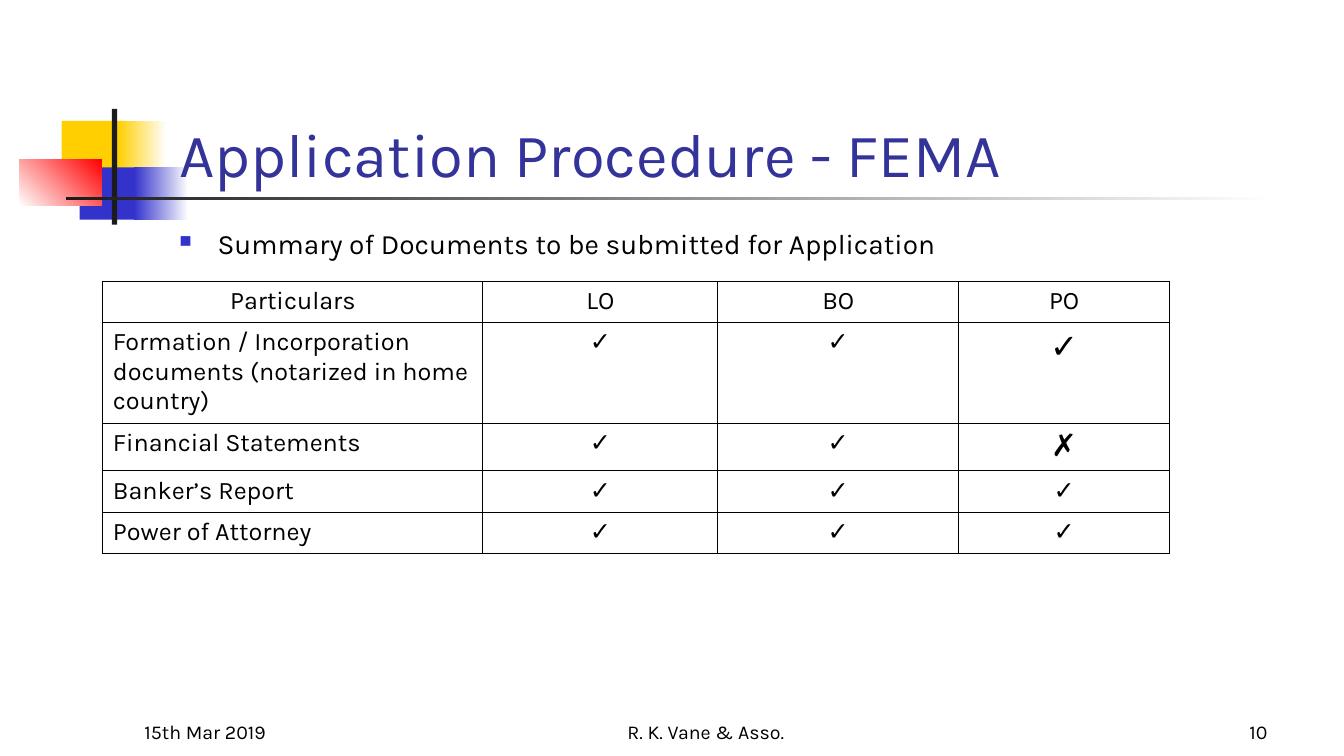
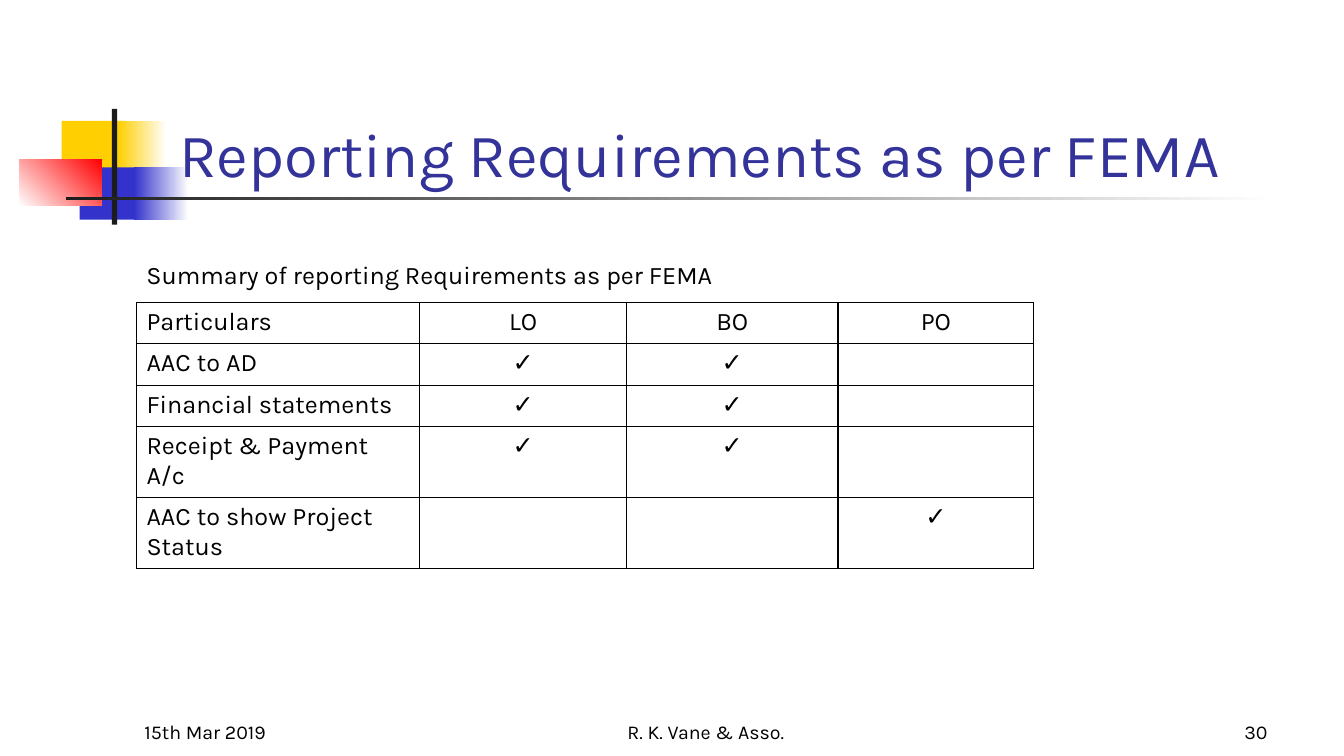
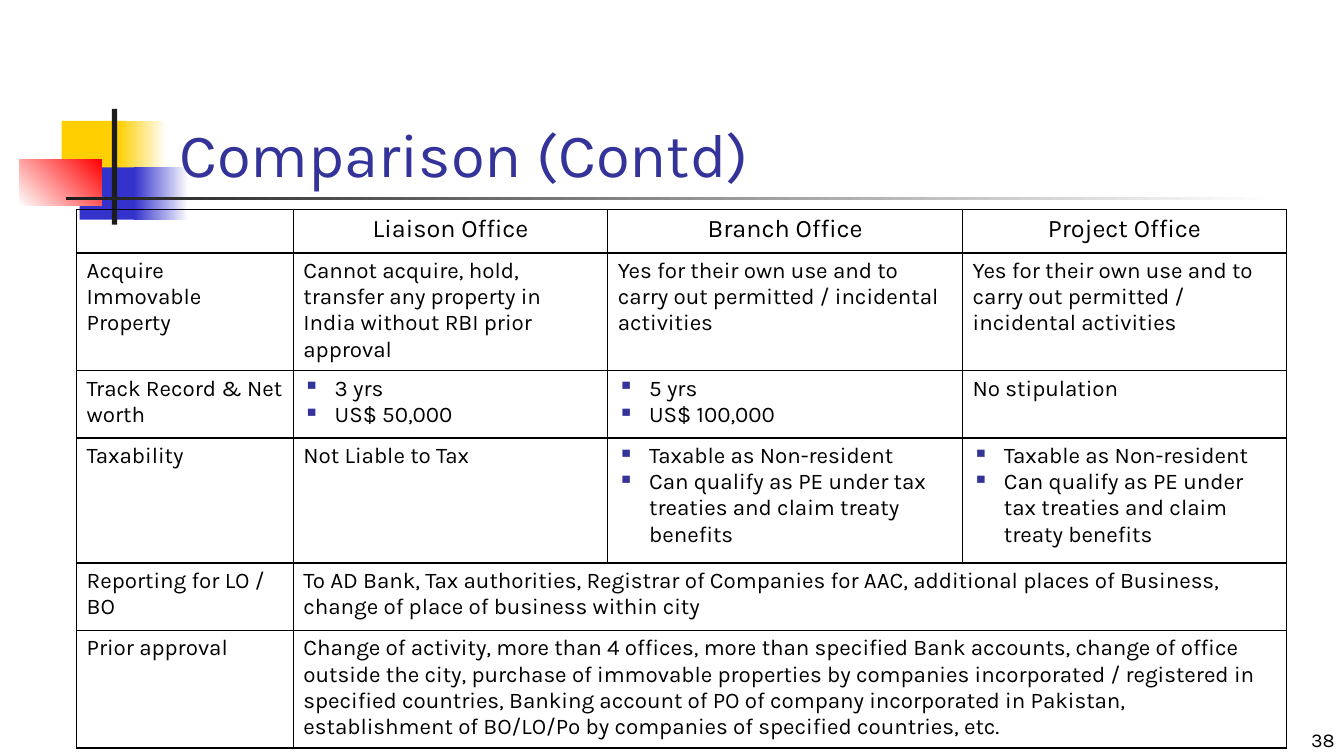
from lxml.etree import SubElement
from pptx import Presentation
from pptx.dml.color import RGBColor
from pptx.enum.shapes import MSO_SHAPE
from pptx.enum.text import MSO_ANCHOR, PP_ALIGN
from pptx.oxml.ns import qn
from pptx.util import Emu, Inches, Pt

WIDTH, HEIGHT = Inches(13.33), Inches(7.5)
FONT = "Karla"
BLACK, WHITE, CHARCOAL = "000000", "FFFFFF", "1C1C1C"
YELLOW, BLUE, RED, INDIGO = "FFCF01", "3333CC", "FF0000", "333399"
YES, NO = "✓", "✗"
LINE_ROW = 5.47

# Each band: left, top, width, height in percent of the slide, colours, gradient angle
BANDS = [
    (4.58, 16, 4.8, 6.93, [YELLOW], 0),
    (8.78, 16, 3.6, 6.93, [YELLOW, WHITE], 0),
    (5.93, 22.13, 4.65, 6.93, [BLUE], 0),
    (9.98, 22.13, 4.05, 6.93, [BLUE, WHITE], 0),
    (1.43, 21.07, 6.15, 6.13, [WHITE, RED], 45),
    (8.33, 14.4, 0.38, 15.33, [CHARCOAL], 0),
    (4.88, 26, 90, 0.5, [CHARCOAL, WHITE], 0),
]


def color(value):
    """Turn a hex string into a colour."""
    return RGBColor.from_string(value)


def across(share):
    """Length of a percentage of the slide's width."""
    return Emu(round(WIDTH * share / 100))


def down(share):
    """Length of a percentage of the slide's height."""
    return Emu(round(HEIGHT * share / 100))


def place(left, top, width, height):
    """Turn percentages of the slide into a position and size."""
    return across(left), down(top), across(width), down(height)


def add_band(page, area, colors, angle):
    """Add a borderless rectangle with a plain or gradient fill."""
    band = page.shapes.add_shape(MSO_SHAPE.RECTANGLE, *place(*area))
    band.shadow.inherit = False
    band.line.fill.background()
    if len(colors) == 1:
        band.fill.solid()
        band.fill.fore_color.rgb = color(colors[0])
        return
    band.fill.gradient()
    band.fill.gradient_angle = angle
    for stop, value in zip(band.fill.gradient_stops, colors):
        stop.color.rgb = color(value)


def write(para, text, size, ink=BLACK, align=PP_ALIGN.LEFT):
    """Fill a paragraph with text in the deck's font."""
    para.text = text
    para.alignment = align
    para.font.name = FONT
    para.font.size = Pt(size)
    para.font.color.rgb = color(ink)


def add_bullet(para, mark, ink, indent, percent=100):
    """Give a paragraph a hanging coloured bullet."""
    properties = para._p.get_or_add_pPr()
    properties.set("marL", str(Inches(indent)))
    properties.set("indent", str(-Inches(indent)))
    bullet = [("buClr", {}), ("buSzPct", {"val": str(percent * 1000)}),
              ("buChar", {"char": mark})]
    defaults = properties.find(qn("a:defRPr"))
    for tag, attributes in bullet:
        element = SubElement(properties, qn(f"a:{tag}"), attributes)
        if tag == "buClr":
            SubElement(element, qn("a:srgbClr"), {"val": ink})
        if defaults is not None:
            defaults.addprevious(element)


def add_text(page, area, text, size, ink=BLACK, align=PP_ALIGN.LEFT,
             anchor=MSO_ANCHOR.TOP):
    """Add a wrapped text box and return its paragraph."""
    box = page.shapes.add_textbox(*place(*area))
    box.text_frame.word_wrap = True
    box.text_frame.vertical_anchor = anchor
    para = box.text_frame.paragraphs[0]
    write(para, text, size, ink, align)
    return para


def add_number(page, number, left=74.2, top=92.27):
    """Add the slide number."""
    add_text(page, (left, top, 20.85, 6.67), number, 14,
             align=PP_ALIGN.RIGHT, anchor=MSO_ANCHOR.BOTTOM)


def add_footer(page, number):
    """Add the date, the firm and the slide number."""
    add_text(page, (10, 92.27, 20.85, 6.67), "15th Mar 2019", 14,
             anchor=MSO_ANCHOR.BOTTOM)
    add_text(page, (36.7, 92.27, 31.65, 6.67), "R. K. Vane & Asso.", 14,
             align=PP_ALIGN.CENTER, anchor=MSO_ANCHOR.BOTTOM)
    add_number(page, number)


def add_page(deck, title):
    """Add a blank slide with the shared bands and title."""
    page = deck.slides.add_slide(deck.slide_layouts[6])
    for *area, colors, angle in BANDS:
        add_band(page, area, colors, angle)
    add_text(page, (12.6, 9.07, 85.2, 16.67), title, 44, INDIGO,
             anchor=MSO_ANCHOR.BOTTOM)
    return page


def style_cell(cell, fill):
    """Draw a cell's four borders and its fill, if any."""
    properties = cell._tc.get_or_add_tcPr()
    for side in ("lnL", "lnR", "lnT", "lnB"):
        line = SubElement(properties, qn(f"a:{side}"), {"w": str(Pt(1))})
        solid = SubElement(line, qn("a:solidFill"))
        SubElement(solid, qn("a:srgbClr"), {"val": BLACK})
    if fill:
        cell.fill.solid()
        cell.fill.fore_color.rgb = color(fill)
    else:
        cell.fill.background()


def fill_cell(cell, content, size, align):
    """Write one text, or a tuple of bulleted lines, into a cell."""
    bulleted = isinstance(content, tuple)
    frame = cell.text_frame
    for index, text in enumerate(content if bulleted else [content]):
        para = frame.add_paragraph() if index else frame.paragraphs[0]
        write(para, text, size, align=align)
        if bulleted:
            add_bullet(para, "▪", INDIGO, 0.31)


def add_grid(page, left, top, columns, heights, rows, centred,
             size=18, special_sizes=None, fill=WHITE):
    """Add a bordered table; a short row's last cell spans the rest."""
    area = place(left, top, sum(columns), sum(heights))
    table = page.shapes.add_table(len(heights), len(columns), *area).table
    table.first_row = table.horz_banding = False
    for column, width in zip(table.columns, columns):
        column.width = across(width)
    for row, height in zip(table.rows, heights):
        row.height = down(height)
    for cell in table.iter_cells():
        style_cell(cell, fill)
    for r, row in enumerate(rows):
        for c, content in enumerate(row):
            text_size = (special_sizes or {}).get((r, c), size if r else 18)
            align = PP_ALIGN.CENTER if centred(r, c) else PP_ALIGN.LEFT
            fill_cell(table.cell(r, c), content, text_size, align)
        if len(row) < len(columns):
            last = table.cell(r, len(columns) - 1)
            table.cell(r, len(row) - 1).merge(last)


def add_application(deck):
    """Build the slide on documents for an application."""
    page = add_page(deck, "Application Procedure - FEMA")
    para = add_text(page, (12.6, 29.33, 85.2, 5.87),
                    "Summary of Documents to be submitted for Application", 20)
    para.space_before = Pt(4)
    add_bullet(para, "■", BLUE, 0.38, 60)
    rows = [
        ["Particulars", "LO", "BO", "PO"],
        ["Formation / Incorporation documents (notarized in home country)",
         YES, YES, YES],
        ["Financial Statements", YES, YES, NO],
        ["Banker’s Report", YES, YES, YES],
        ["Power of Attorney", YES, YES, YES],
    ]
    add_grid(page, 7.65, 37.2, [28.28, 17.48, 17.93, 15.68],
             [LINE_ROW, 13.33, 6.27, LINE_ROW, LINE_ROW], rows,
             lambda r, c: r == 0 or c > 0,
             special_sizes={(1, 3): 24, (2, 3): 22})
    add_footer(page, "10")


def add_reporting(deck):
    """Build the slide on reporting requirements."""
    page = add_page(deck, "Reporting Requirements as per FEMA")
    add_text(page, (10.15, 33.6, 81.3, 6),
             "Summary of reporting Requirements as per FEMA", 18)
    rows = [
        ["Particulars", "LO", "BO", "PO"],
        ["AAC to AD", YES, YES, ""],
        ["Financial statements", YES, YES, ""],
        ["Receipt & Payment A/c", YES, YES, ""],
        ["AAC to show Project Status", "", "", YES],
    ]
    add_grid(page, 10.15, 40, [21.08, 15.38, 15.75, 14.55],
             [LINE_ROW] * 3 + [9.4] * 2, rows, lambda r, c: c > 0)
    add_footer(page, "30")


def add_comparison(deck):
    """Build the slide that compares the kinds of office."""
    page = add_page(deck, "Comparison (Contd)")
    own_use = ("Yes for their own use and to carry out permitted / "
               "incidental activities")
    taxable = ("Taxable as Non-resident",
               "Can qualify as PE under tax treaties and claim treaty benefits")
    rows = [
        ["", "Liaison Office", "Branch Office", "Project Office"],
        ["Acquire Immovable Property",
         "Cannot acquire, hold, transfer any property in India without RBI "
         "prior approval", own_use, own_use],
        ["Track Record & Net worth", ("3 yrs", "US$ 50,000"),
         ("5 yrs", "US$ 100,000"), "No stipulation"],
        ["Taxability", "Not Liable to Tax", taxable, taxable],
        ["Reporting for LO / BO",
         "To AD Bank, Tax authorities, Registrar of Companies for AAC, "
         "additional places of Business, change of place of business within "
         "city"],
        ["Prior approval",
         "Change of activity, more than 4 offices, more than specified Bank "
         "accounts, change of office outside the city, purchase of immovable "
         "properties by companies incorporated / registered in specified "
         "countries, Banking account of PO of company incorporated in "
         "Pakistan, establishment of BO/LO/Po by companies of specified "
         "countries, etc."],
    ]
    add_grid(page, 5.7, 27.73, [16.13, 23.4, 26.4, 24.08],
             [5.73, 15.07, 8.93, 16.53, 8.93, 15.33], rows,
             lambda r, c: r == 0, size=16, fill=None)
    add_number(page, "38", 79.2, 93.33)


def main():
    """Build and save the deck."""
    deck = Presentation()
    deck.slide_width, deck.slide_height = WIDTH, HEIGHT
    add_application(deck)
    add_reporting(deck)
    add_comparison(deck)
    deck.save("out.pptx")


if __name__ == "__main__":
    main()
